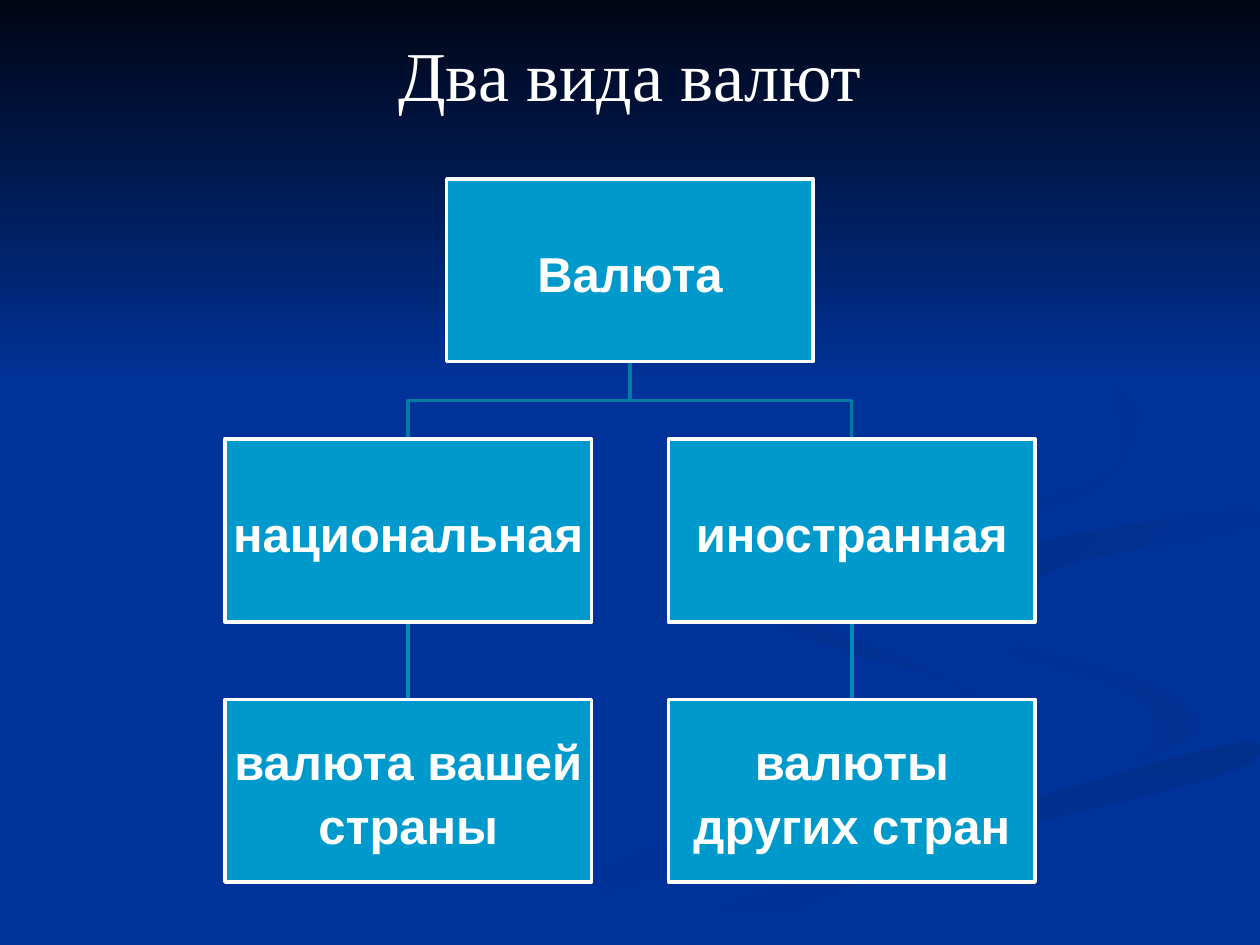
from lxml import etree
from pptx import Presentation
from pptx.dml.color import RGBColor
from pptx.enum.shapes import MSO_CONNECTOR, MSO_SHAPE
from pptx.enum.text import MSO_ANCHOR, PP_ALIGN
from pptx.oxml.ns import qn
from pptx.util import Inches, Pt

BLUE, DEEP_BLUE, WHITE = "003399", "002F8C", "FFFFFF"
BOX_WIDTH, BOX_HEIGHT = 2.91, 1.45
CENTER, BRANCH_OFFSET = 5, 1.76
FIRST_ROW, ROW_STEP = 1.42, 2.065

BRANCHES = [
    (CENTER - BRANCH_OFFSET, "национальная", "валюта вашей страны"),
    (CENTER + BRANCH_OFFSET, "иностранная", "валюты других стран"),
]

# Background ribbons: start colour, end colour, gradient angle, corners
RIBBONS = [
    (BLUE, "003193", 0, [(5.7, 4.6), (6.1, 5), (7.9, 5.5), (7.8, 5.8),
                         (3, 7.5), (3.6, 7.5), (8, 6), (7.8, 5.5)]),
    (BLUE, "003193", 45, [(7.2, 4.6), (7.6, 5.1), (9.1, 5.5), (9.2, 5.9),
                          (8.9, 6.1), (9.6, 5.8), (9.2, 5.4), (7.6, 5)]),
    (DEEP_BLUE, BLUE, 90, [(5, 7.5), (5.7, 7.5), (7.5, 6.7),
                           (10, 6.1), (10, 5.8), (7, 6.7)]),
    (DEEP_BLUE, BLUE, 45, [(7.8, 4.6), (8.2, 5), (8.2, 4.5),
                           (10, 4.2), (10, 4), (8.1, 4.3)]),
    (DEEP_BLUE, BLUE, 45, [(8.8, 3), (9, 3.7), (8.2, 4), (5.6, 4.5),
                           (6.2, 5), (6, 4.4), (8.7, 4), (9.1, 3.3)]),
]


def color(hex_value):
    return RGBColor.from_string(hex_value)


def fill_gradient(shape, start, end, clockwise_angle):
    shape.fill.gradient()
    shape.fill.gradient_angle = (360 - clockwise_angle) % 360
    for stop, hex_value in zip(shape.fill.gradient_stops, (start, end)):
        stop.color.rgb = color(hex_value)
    shape.line.fill.background()
    shape.shadow.inherit = False


def set_line(shape, hex_value):
    shape.line.color.rgb = color(hex_value)
    shape.line.width = Pt(2)


def rounded(corners, passes=3):
    """Cut every corner of a closed outline repeatedly until it looks curved."""
    for _ in range(passes):
        following = corners[1:] + corners[:1]
        corners = [
            (x + (next_x - x) * share, y + (next_y - y) * share)
            for (x, y), (next_x, next_y) in zip(corners, following)
            for share in (0.2, 0.8)]
    return corners


def add_outline(slide, points, close):
    start, *rest = [(Inches(x), Inches(y)) for x, y in points]
    builder = slide.shapes.build_freeform(*start)
    builder.add_line_segments(rest, close=close)
    return builder.convert_to_shape()


def add_backdrop(slide):
    slide.background.fill.solid()
    slide.background.fill.fore_color.rgb = color(BLUE)
    for start, end, angle, corners in RIBBONS:
        ribbon = add_outline(slide, rounded(corners), True)
        fill_gradient(ribbon, start, end, angle)
    sky = slide.shapes.add_shape(
        MSO_SHAPE.RECTANGLE, 0, 0, Inches(10), Inches(3.08))
    fill_gradient(sky, "000514", BLUE, 90)


def write(frame, text, font_name, size, bold):
    frame.word_wrap = True
    paragraph = frame.paragraphs[0]
    paragraph.alignment = PP_ALIGN.CENTER
    run = paragraph.add_run()
    run.text = text
    run.font.name = font_name
    run.font.size = Pt(size)
    run.font.bold = bold
    run.font.color.rgb = color(WHITE)
    return paragraph


def set_margins(frame, margin):
    frame.margin_left = frame.margin_right = Inches(margin)
    frame.margin_top = frame.margin_bottom = Inches(margin)


def set_title(slide, text):
    title = slide.shapes.title
    title.left, title.top = Inches(0.5), Inches(0.25)
    title.width, title.height = Inches(9), Inches(1.08)
    frame = title.text_frame
    set_margins(frame, 0)
    frame.vertical_anchor = MSO_ANCHOR.TOP
    write(frame, text, "Times New Roman", 40, False)
    # Bring the title in front of the backdrop
    title.element.getparent().append(title.element)


def row_top(row):
    return FIRST_ROW + row * ROW_STEP


def row_bottom(row):
    return row_top(row) + BOX_HEIGHT


def add_box(slide, center, row, text):
    box = slide.shapes.add_shape(
        MSO_SHAPE.RECTANGLE, Inches(center - BOX_WIDTH / 2),
        Inches(row_top(row)), Inches(BOX_WIDTH), Inches(BOX_HEIGHT))
    box.shadow.inherit = False
    box.fill.solid()
    box.fill.fore_color.rgb = color("0099CC")
    set_line(box, WHITE)
    frame = box.text_frame
    set_margins(frame, 0.02)
    frame.vertical_anchor = MSO_ANCHOR.MIDDLE
    write(frame, text, "Arial", 28, True).line_spacing = 1.08


def add_elbow(slide, center):
    """Bent line from the root box down to the branch at center."""
    top, bottom = row_bottom(0), row_top(1)
    middle = (top + bottom) / 2
    elbow = add_outline(slide, [(CENTER, top), (CENTER, middle),
                                (center, middle), (center, bottom)], False)
    elbow.fill.background()
    elbow.shadow.inherit = False
    set_line(elbow, "007BA3")


def add_stem(slide, center):
    """Straight line from a branch to its explanation."""
    stem = slide.shapes.add_connector(
        MSO_CONNECTOR.STRAIGHT, Inches(center), Inches(row_bottom(1)),
        Inches(center), Inches(row_top(2)))
    set_line(stem, "008BB9")
    etree.SubElement(stem.element.spPr, qn("a:effectLst"))


def main():
    presentation = Presentation()
    presentation.slide_width, presentation.slide_height = Inches(10), Inches(7.5)
    slide = presentation.slides.add_slide(presentation.slide_layouts[5])
    add_backdrop(slide)
    set_title(slide, "Два вида валют")
    for center, _, _ in BRANCHES:
        add_elbow(slide, center)
        add_stem(slide, center)
    add_box(slide, CENTER, 0, "Валюта")
    for center, kind, meaning in BRANCHES:
        add_box(slide, center, 1, kind)
        add_box(slide, center, 2, meaning)
    presentation.save("out.pptx")


if __name__ == "__main__":
    main()
